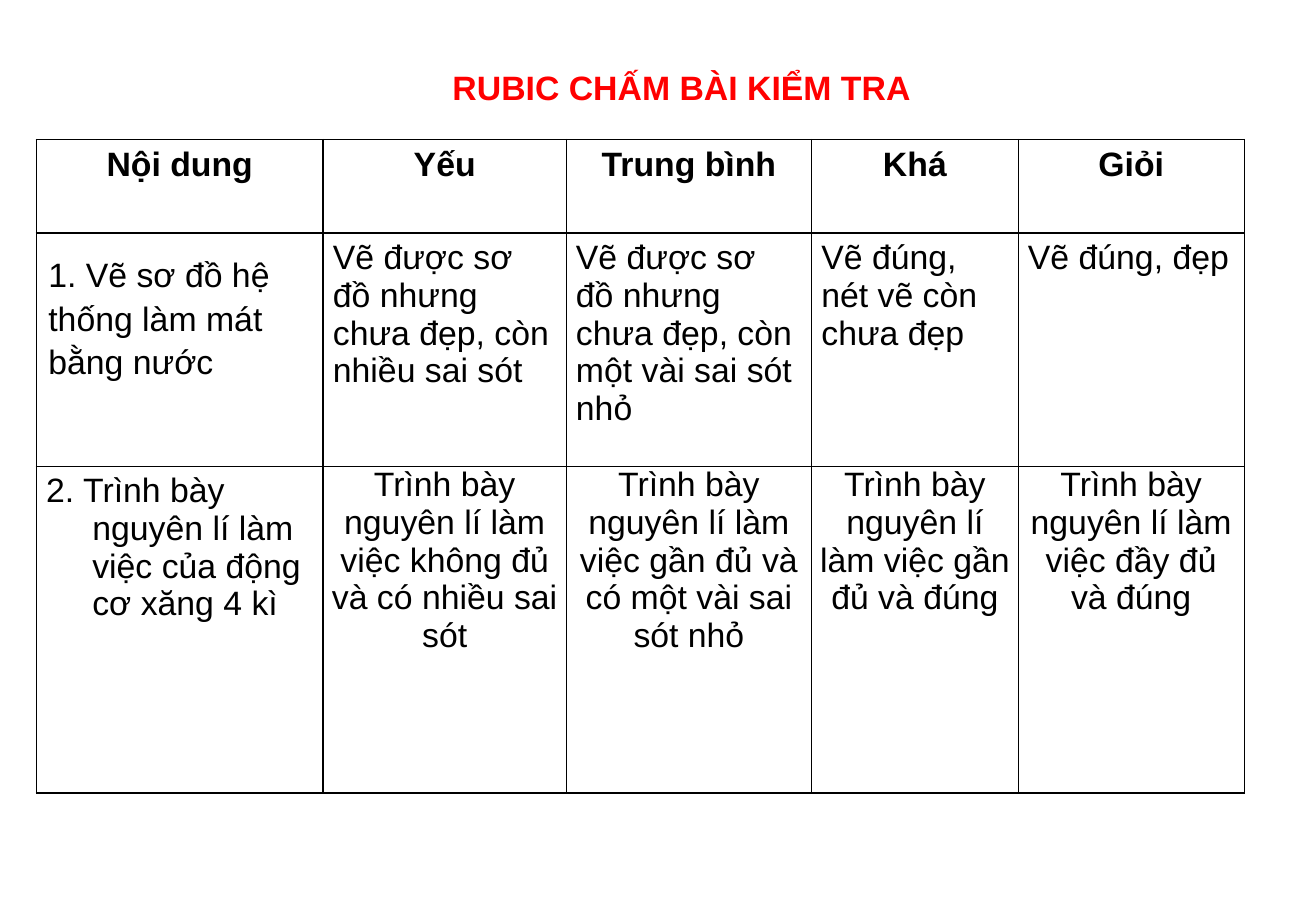
from lxml import etree
from pptx import Presentation
from pptx.dml.color import RGBColor
from pptx.enum.text import MSO_ANCHOR, PP_ALIGN
from pptx.oxml.ns import qn
from pptx.util import Inches, Pt

LEFT, CENTER = PP_ALIGN.LEFT, PP_ALIGN.CENTER
TOP = MSO_ANCHOR.TOP

TITLE = "RUBIC CHẤM BÀI KIỂM TRA"
LEVELS = ["Nội dung", "Yếu", "Trung bình", "Khá", "Giỏi"]
DRAWING_TASK = "1. Vẽ sơ đồ hệ thống làm mát bằng nước"
DRAWING_GRADES = [
    "Vẽ được sơ đồ nhưng chưa đẹp, còn nhiều sai sót",
    "Vẽ được sơ đồ nhưng chưa đẹp, còn một vài sai sót nhỏ",
    "Vẽ đúng, nét vẽ còn chưa đẹp",
    "Vẽ đúng, đẹp",
]
EXPLAINING_TASK = "2. Trình bày nguyên lí làm việc của động cơ xăng 4 kì"
EXPLAINING_GRADES = [
    "Trình bày nguyên lí làm việc không đủ và có nhiều sai sót",
    "Trình bày nguyên lí làm việc gần đủ và có một vài sai sót nhỏ",
    "Trình bày nguyên lí làm việc gần đủ và đúng",
    "Trình bày nguyên lí làm việc đầy đủ và đúng",
]

SLIDE_W, SLIDE_H = 10.83, 7.5
COLUMNS = [2.36, 2, 2.02, 1.7, 1.86]
ROWS = [0.77, 1.92, 2.69]
TABLE_LEFT, TABLE_TOP = 0.3, 1.15
BLACK, RED = "000000", "FF0000"
BOX_MARGINS, CELL_MARGINS, TIGHT_MARGINS = (0.1, 0.05), (0.08, 0.05), (0.06, 0)
HANGING = 0.38
BOX_SPACING = 1.07


def color(hex_text):
    return RGBColor.from_string(hex_text)


def write(frame, text, align=LEFT, bold=False, ink=BLACK, spacing=1.0, hanging=0):
    paragraph = frame.paragraphs[0]
    paragraph.text = text
    paragraph.alignment = align
    paragraph.line_spacing = spacing
    paragraph.space_before = Pt(0)
    if hanging:
        properties = paragraph._p.get_or_add_pPr()
        properties.set("marL", str(Inches(hanging)))
        properties.set("indent", str(-Inches(hanging)))
    font = paragraph.runs[0].font
    font.name, font.size, font.bold = "Arial", Pt(20), bold
    font.color.rgb = color(ink)


def set_margins(target, margins):
    target.margin_left = target.margin_right = Inches(margins[0])
    target.margin_top = target.margin_bottom = Inches(margins[1])


def outline(cell):
    """Draw a thin black border on all four sides and clear the fill."""
    properties = cell._tc.get_or_add_tcPr()
    for side in ("lnL", "lnR", "lnT", "lnB"):
        line = etree.SubElement(properties, qn("a:" + side), w=str(Pt(1)))
        fill = etree.SubElement(line, qn("a:solidFill"))
        etree.SubElement(fill, qn("a:srgbClr"), val=BLACK)
    cell.fill.background()


def add_title(slide):
    title = slide.shapes.title
    title.left, title.top = Inches(2.87), Inches(0.48)
    title.width, title.height = Inches(5.48), Inches(0.44)
    frame = title.text_frame
    frame.vertical_anchor = TOP
    set_margins(frame, BOX_MARGINS)
    write(frame, TITLE, align=CENTER, bold=True, ink=RED, spacing=BOX_SPACING)


def add_rubric(slide):
    table = slide.shapes.add_table(
        len(ROWS), len(COLUMNS), Inches(TABLE_LEFT), Inches(TABLE_TOP),
        Inches(sum(COLUMNS)), Inches(sum(ROWS))).table
    table.first_row = table.horz_banding = False
    for column, width in zip(table.columns, COLUMNS):
        column.width = Inches(width)
    for row, height in zip(table.rows, ROWS):
        row.height = Inches(height)

    header = dict(align=CENTER, bold=True)
    # The drawing task sits in its own text box over the first cell of its row.
    grid = [
        [(level, CELL_MARGINS, header) for level in LEVELS],
        [("", CELL_MARGINS, {})]
        + [(grade, CELL_MARGINS, {}) for grade in DRAWING_GRADES],
        [(EXPLAINING_TASK, CELL_MARGINS, dict(hanging=HANGING))]
        + [(grade, TIGHT_MARGINS, dict(align=CENTER)) for grade in EXPLAINING_GRADES],
    ]
    for r, row in enumerate(grid):
        for c, (text, margins, style) in enumerate(row):
            cell = table.cell(r, c)
            outline(cell)
            set_margins(cell, margins)
            cell.vertical_anchor = TOP
            if text:
                write(cell.text_frame, text, **style)


def add_drawing_task(slide):
    top = TABLE_TOP + ROWS[0] + 0.1
    box = slide.shapes.add_textbox(
        Inches(TABLE_LEFT), Inches(top), Inches(COLUMNS[0]), Inches(1.45))
    frame = box.text_frame
    frame.word_wrap = True
    set_margins(frame, BOX_MARGINS)
    write(frame, DRAWING_TASK, spacing=BOX_SPACING)


def main():
    deck = Presentation()
    deck.slide_width, deck.slide_height = Inches(SLIDE_W), Inches(SLIDE_H)
    slide = deck.slides.add_slide(deck.slide_layouts[5])
    add_title(slide)
    add_rubric(slide)
    add_drawing_task(slide)
    deck.save("out.pptx")


if __name__ == "__main__":
    main()
